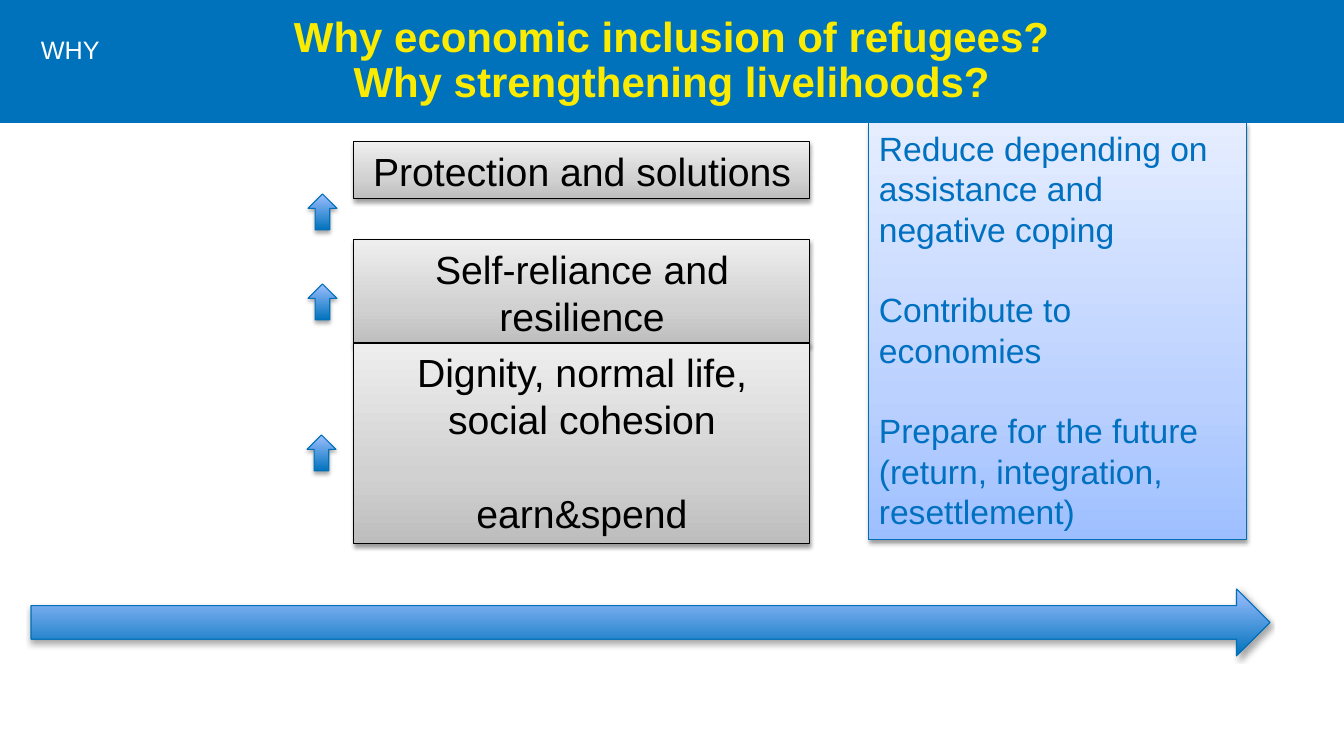
import pptx
import pptx.util
import pptx.dml.color
import pptx.enum.shapes
import pptx.enum.text
import pptx.oxml
import pptx.oxml.ns

KIND = pptx.enum.shapes.MSO_SHAPE
ALIGN = pptx.enum.text.PP_ALIGN
MID = pptx.enum.text.MSO_ANCHOR.MIDDLE
SCALE = 914400 / 100.8

WIDE, HIGH = 1344, 756
BLUE, EDGE, BLACK = "0072BC", "006FB8", "000000"
SKY = [(0, BLUE), (100, "9EBFFF")]
GREY = [(0, "BDBDBD"), (35, "D1D1D1"), (100, "EEEEEE")]
PALE = [(0, "9EBFFF"), (35, "BBD1FF"), (100, "E5EDFF")]

TITLE = ["Why economic inclusion of refugees?", "Why strengthening livelihoods?"]
LABEL = ["WHY"]
STEPS = [
    (142, 57, ["Protection and solutions"]),
    (240, 105, ["Self-reliance and resilience"]),
    (343, 201, ["Dignity, normal life, social cohesion", "earn&spend"]),
]
GAINS = [
    "Reduce depending on assistance and negative coping",
    "Contribute to economies",
    "Prepare for the future (return, integration, resettlement)",
]
RISES = [(308, 194), (308, 284), (307, 435)]


def px(num):
    return pptx.util.Emu(round(num * SCALE))


def tint(code):
    return pptx.dml.color.RGBColor.from_string(code)


def shade(shape, stops, dim):
    shape.fill.gradient()
    shape.fill.gradient_angle = 90
    props = shape._element.spPr
    space = pptx.oxml.ns.nsdecls("a")
    marks = "".join(
        f'<a:gs pos="{pos * 1000}"><a:srgbClr val="{code}"/></a:gs>'
        for pos, code in stops
    )
    old = props.find(".//" + pptx.oxml.ns.qn("a:gsLst"))
    old.getparent().replace(old, pptx.oxml.parse_xml(f"<a:gsLst {space}>{marks}</a:gsLst>"))
    props.append(pptx.oxml.parse_xml(
        f'<a:effectLst {space}><a:outerShdw blurRad="39370" dist="22860" dir="5400000" '
        f'rotWithShape="0"><a:srgbClr val="{BLACK}"><a:alpha val="{dim * 1000}"/>'
        f"</a:srgbClr></a:outerShdw></a:effectLst>"
    ))


def draw(slide, kind, place, stops, edge, dim=35):
    shape = slide.shapes.add_shape(kind, *map(px, place))
    shape.line.color.rgb = tint(edge)
    shape.line.width = pptx.util.Pt(0.75)
    shade(shape, stops, dim)
    return shape


def write(shape, lines, size, code, align=ALIGN.LEFT, gap=0, bold=False, lead=None):
    frame = shape.text_frame
    frame.word_wrap = True
    for num, line in enumerate(lines):
        para = frame.add_paragraph() if num else frame.paragraphs[0]
        para.alignment = align
        para.line_spacing = lead
        if num and gap:
            para.space_before = pptx.util.Pt(gap)
        run = para.add_run()
        run.text = line
        run.font.name = "Arial"
        run.font.size = pptx.util.Pt(size)
        run.font.bold = bold
        run.font.color.rgb = tint(code)
    return frame


def main():
    deck = pptx.Presentation()
    deck.slide_width, deck.slide_height = px(WIDE), px(HIGH)
    slide = deck.slides.add_slide(deck.slide_layouts[6])

    draw(slide, KIND.RIGHT_ARROW, (31, 589, 1239, 67), SKY, EDGE)

    band = slide.shapes.add_shape(KIND.RECTANGLE, 0, 0, px(WIDE), px(123))
    band.shadow.inherit = False
    band.fill.solid()
    band.fill.fore_color.rgb = tint(BLUE)
    band.line.fill.background()
    frame = write(band, TITLE, 30, "FAEB00", ALIGN.CENTER, bold=True, lead=0.9)
    frame.vertical_anchor = MID
    frame.margin_left = frame.margin_right = frame.margin_top = frame.margin_bottom = 0

    for top, tall, lines in STEPS:
        box = draw(slide, KIND.RECTANGLE, (354, top, 456, tall), GREY, BLACK, 38)
        frame = write(box, lines, 28, BLACK, ALIGN.CENTER, gap=33.6)
        frame.vertical_anchor = pptx.enum.text.MSO_ANCHOR.TOP

    box = draw(slide, KIND.RECTANGLE, (869, 123, 378, 417), PALE, EDGE, 38)
    frame = write(box, GAINS, 24, "0070C0", gap=28.8)
    frame.vertical_anchor = pptx.enum.text.MSO_ANCHOR.TOP

    for left, top in RISES:
        draw(slide, KIND.UP_ARROW, (left, top, 29, 36), SKY, EDGE)

    label = slide.shapes.add_textbox(*map(px, (31, 29, 85, 40)))
    write(label, LABEL, 18, "FFFFFF")

    deck.save("out.pptx")


if __name__ == "__main__":
    main()
